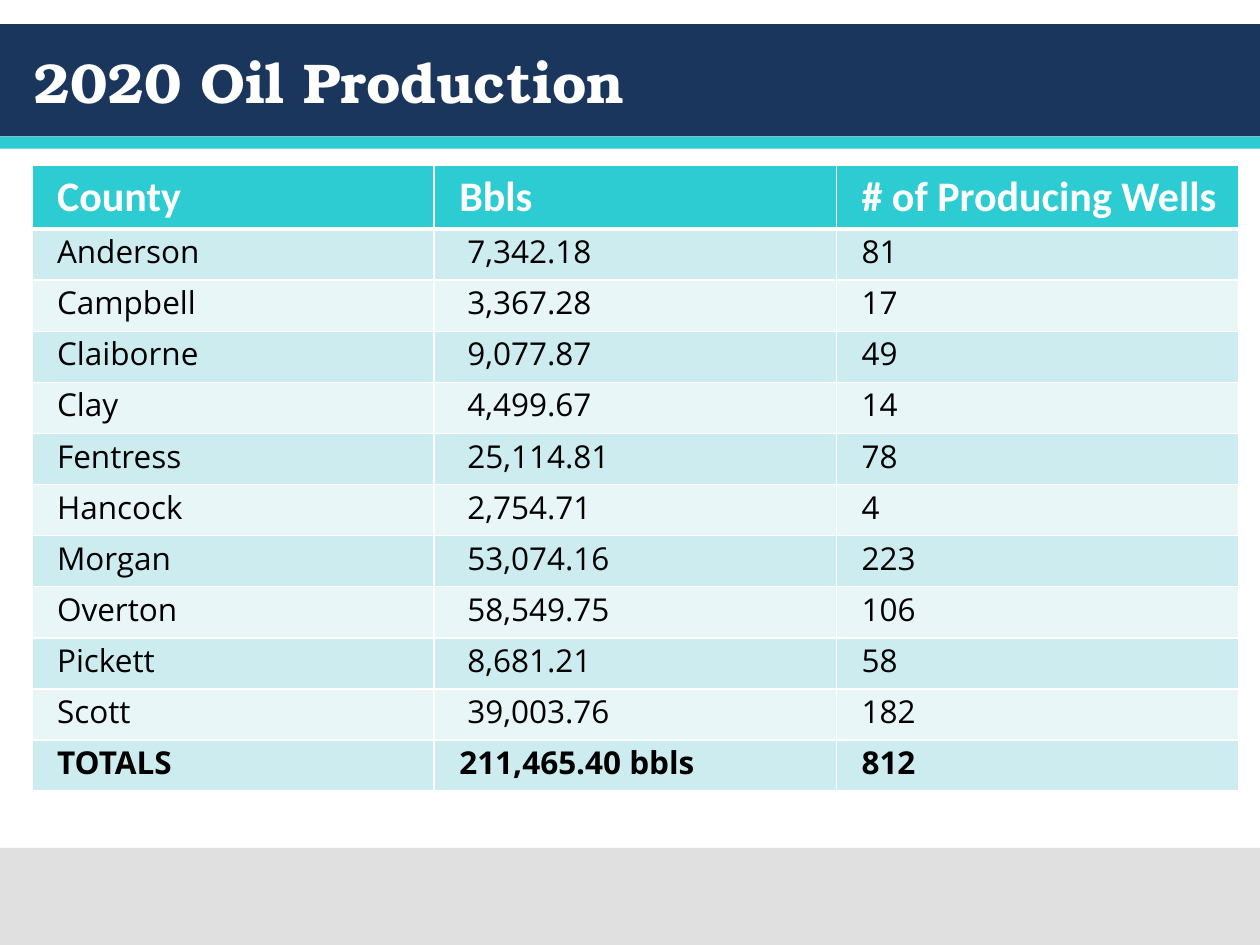
from pptx import Presentation
from pptx.dml.color import RGBColor
from pptx.enum.shapes import MSO_SHAPE
from pptx.enum.text import MSO_ANCHOR, MSO_AUTO_SIZE, PP_ALIGN
from pptx.oxml.ns import qn
from pptx.util import Pt
from lxml import etree

RECTANGLE = MSO_SHAPE.RECTANGLE
MIDDLE = MSO_ANCHOR.MIDDLE
NO_FIT = MSO_AUTO_SIZE.NONE
LEFT = PP_ALIGN.LEFT

COLOURS = {
    "navy": "1B365D",
    "teal": "2DCCD3",
    "grey": "E0E0E0",
    "white": "FFFFFF",
    "black": "000000",
    "odd": "CDECEF",
    "even": "E8F6F7",
}
FORMATS = {
    "title": {"name": "TeX Gyre Bonum", "size": Pt(32), "bold": True},
    "header": {"name": "Calibri", "size": Pt(24), "bold": True},
    "body": {"name": "Open Sans", "size": Pt(18), "bold": False},
    "total": {"name": "Open Sans", "size": Pt(18), "bold": True},
}
HEADER_MARGINS = {"margin_left": Pt(14.4), "margin_top": Pt(3.6),
                  "margin_right": Pt(7.2), "margin_bottom": Pt(3.6)}
BODY_MARGINS = {"margin_left": Pt(14.4), "margin_top": Pt(0.6),
                "margin_right": Pt(0.6), "margin_bottom": Pt(0)}
HEADER_HEIGHT = 35.6
BODY_HEIGHT = 29.22

BANDS = [
    (13.8, 64.2, "navy"),
    (78, 7, "teal"),
    (484.5, 55.5, "grey"),
]
PRODUCTION = [
    ("County", "Bbls", "# of Producing Wells"),
    ("Anderson", " 7,342.18", "81"),
    ("Campbell", " 3,367.28", "17"),
    ("Claiborne", " 9,077.87", "49"),
    ("Clay", " 4,499.67", "14"),
    ("Fentress", " 25,114.81", "78"),
    ("Hancock", " 2,754.71", "4"),
    ("Morgan", " 53,074.16", "223"),
    ("Overton", " 58,549.75", "106"),
    ("Pickett", " 8,681.21", "58"),
    ("Scott", " 39,003.76", "182"),
    ("TOTALS", "211,465.40 bbls", "812"),
]


def apply(target, values):
    for name, value in values.items():
        setattr(target, name, value)


class SlideBuilder:
    def __init__(self, deck, colours, formats):
        self.colours = colours
        self.formats = formats
        self.page = deck.slides.add_slide(deck.slide_layouts[5])

    def colour(self, name):
        return RGBColor.from_string(self.colours[name])

    def add_text(self, frame, text, style, colour):
        para = frame.paragraphs[0]
        para.alignment = LEFT
        span = para.add_run()
        span.text = text
        apply(span.font, self.formats[style])
        span.font.color.rgb = self.colour(colour)

    def band(self, top, height, colour):
        box = self.page.shapes.add_shape(
            RECTANGLE, 0, Pt(top), Pt(720), Pt(height))
        box.shadow.inherit = False
        box.fill.solid()
        box.fill.fore_color.rgb = self.colour(colour)
        box.line.fill.background()

    def title(self, text, left, top, width, height):
        box = self.page.shapes.title
        box.element.getparent().append(box.element)
        apply(box, {"left": Pt(left), "top": Pt(top),
                    "width": Pt(width), "height": Pt(height)})
        apply(box.text_frame, {"vertical_anchor": MIDDLE, "word_wrap": True,
                               "auto_size": NO_FIT})
        self.add_text(box.text_frame, text, "title", "white")

    def borders(self, cell, widths):
        properties = cell._tc.get_or_add_tcPr()
        for side, width in widths.items():
            line = etree.SubElement(properties, qn(f"a:ln{side}"),
                                    w=str(Pt(width)))
            fill = etree.SubElement(line, qn("a:solidFill"))
            etree.SubElement(fill, qn("a:srgbClr"), val=self.colours["white"])

    def cell(self, cell, text, row, last):
        if row == 0:
            style, colour, fill = "header", "white", "teal"
        else:
            style = "total" if row == last else "body"
            colour, fill = "black", "odd" if row % 2 else "even"
        apply(cell, BODY_MARGINS if row else HEADER_MARGINS)
        self.borders(cell, {"L": 1, "R": 1, "T": 3 if row == 1 else 1,
                            "B": 3 if row == 0 else 1})
        cell.fill.solid()
        cell.fill.fore_color.rgb = self.colour(fill)
        self.add_text(cell.text_frame, text, style, colour)

    def table(self, records, left, top, width):
        last = len(records) - 1
        height = HEADER_HEIGHT + last * BODY_HEIGHT
        table = self.page.shapes.add_table(
            len(records), len(records[0]),
            Pt(left), Pt(top), Pt(width), Pt(height)).table
        for row, record in enumerate(records):
            table.rows[row].height = Pt(BODY_HEIGHT if row else HEADER_HEIGHT)
            for column, text in enumerate(record):
                self.cell(table.cell(row, column), text, row, last)


def main():
    deck = Presentation()
    deck.slide_width, deck.slide_height = Pt(720), Pt(540)
    builder = SlideBuilder(deck, COLOURS, FORMATS)
    for band in BANDS:
        builder.band(*band)
    builder.title("2020 Oil Production", 12, 13.8, 696, 64.8)
    builder.table(PRODUCTION, 18.2, 94.4, 689.6)
    deck.save("out.pptx")


if __name__ == "__main__":
    main()
